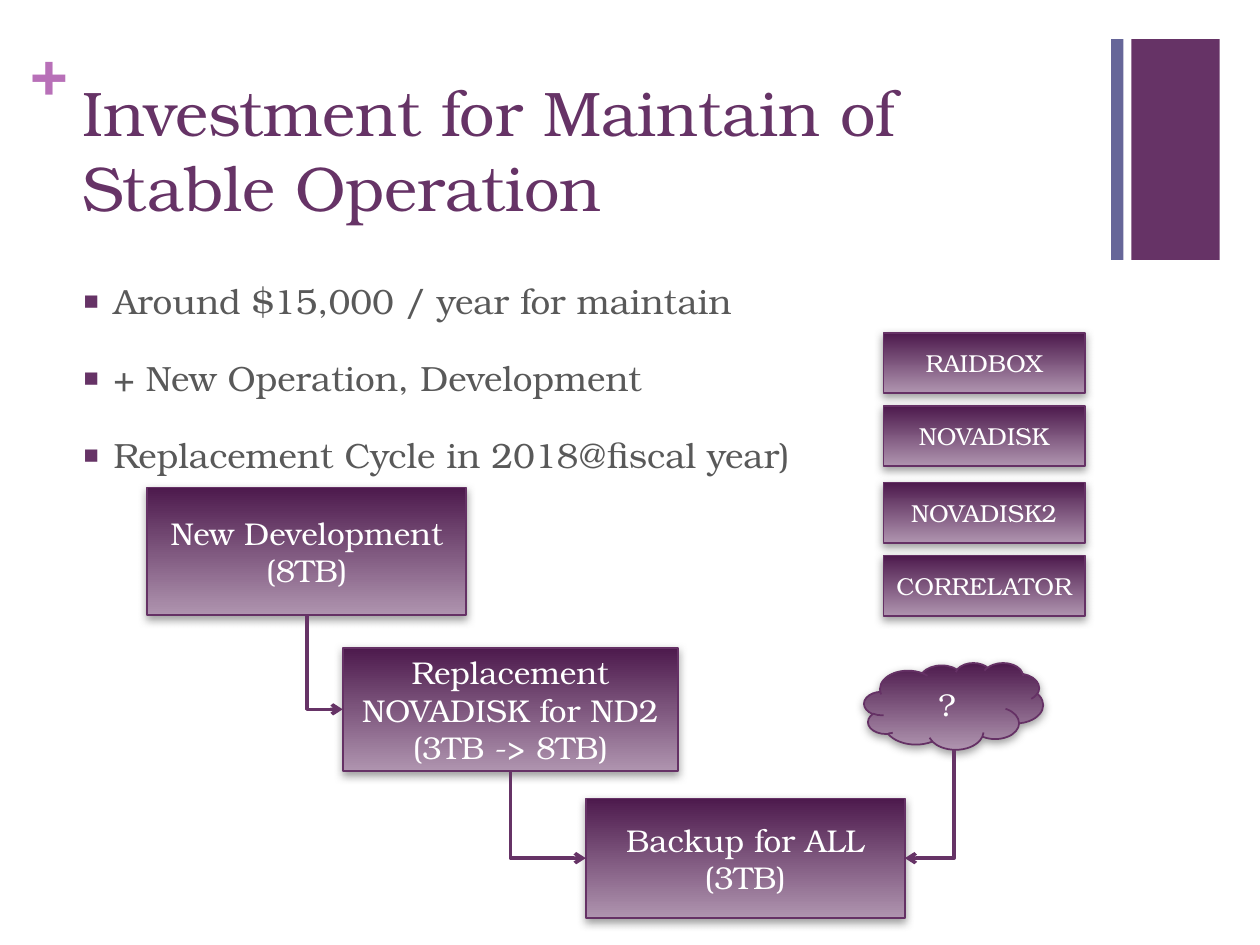
"""Build the slide on investment for stable operation."""
from lxml.etree import SubElement
from pptx import Presentation
from pptx.dml.color import RGBColor
from pptx.enum.shapes import MSO_CONNECTOR, MSO_SHAPE
from pptx.enum.text import MSO_ANCHOR, MSO_AUTO_SIZE, PP_ALIGN
from pptx.oxml.ns import qn
from pptx.util import Cm, Pt

FONT = "TeX Gyre Bonum"
PURPLE, WHITE = "663366", "FFFFFF"


def color(value):
    """Turn a hex string into a colour."""
    return RGBColor.from_string(value)


def write(shape, text, size, ink, align=PP_ALIGN.LEFT, bold=False):
    """Fill a shape with text and format every run."""
    frame = shape.text_frame
    frame.text = text
    frame.word_wrap = True
    frame.auto_size = MSO_AUTO_SIZE.NONE
    for paragraph in frame.paragraphs:
        paragraph.alignment = align
        for run in paragraph.runs:
            run.font.name = FONT
            run.font.size = Pt(size)
            run.font.bold = bold
            run.font.color.rgb = color(ink)
    return frame


deck = Presentation()
deck.slide_width, deck.slide_height = Cm(25.4), Cm(19.05)
page = deck.slides.add_slide(deck.slide_layouts[5])

for left, width, fill in [(22.81, 1.78, PURPLE), (22.4, 0.25, "666699")]:
    bar = page.shapes.add_shape(MSO_SHAPE.RECTANGLE, Cm(left), Cm(0.79), Cm(width), Cm(4.45))
    bar.shadow.inherit = False
    bar.fill.solid()
    bar.fill.fore_color.rgb = color(fill)
    bar.line.fill.background()

plus = page.shapes.add_textbox(Cm(0.61), Cm(0.64), Cm(0.74), Cm(1.55))
plus_frame = write(plus, "+", 36, "B870B8", bold=True)
plus_frame.word_wrap = False
plus_frame.margin_left = plus_frame.margin_right = 0
plus_frame.margin_top = plus_frame.margin_bottom = 0

title = page.shapes.title
title.left, title.top, title.width, title.height = Cm(1.4), Cm(1.35), Cm(20.98), Cm(3.1)
title_frame = write(title, "Investment for Maintain of Stable Operation", 36, PURPLE)
title_frame.vertical_anchor = MSO_ANCHOR.TOP

points = [
    "Around $15,000 / year for maintain",
    "+ New Operation, Development",
    "Replacement Cycle in 2018@fiscal year)",
]
body = page.shapes.add_textbox(Cm(1.4), Cm(5.51), Cm(20.98), Cm(11.51))
for paragraph in write(body, "\n".join(points), 20, "595959").paragraphs:
    paragraph.space_before = Pt(20)
    properties = paragraph._p.get_or_add_pPr()
    properties.set("marL", str(Cm(0.64)))
    properties.set("indent", str(-Cm(0.64)))
    bullet_color = SubElement(properties, qn("a:buClr"))
    SubElement(bullet_color, qn("a:srgbClr"), val=PURPLE)
    SubElement(properties, qn("a:buSzPct"), val="75000")
    SubElement(properties, qn("a:buFont"), typeface=FONT)
    SubElement(properties, qn("a:buChar"), char="■")

boxes = [
    (MSO_SHAPE.RECTANGLE, 2.97, 9.83, 6.43, 2.57, "New Development\n(8TB)", 18),
    (MSO_SHAPE.RECTANGLE, 6.91, 13.06, 6.76, 2.49, "Replacement NOVADISK for ND2\n(3TB -> 8TB)", 18),
    (MSO_SHAPE.RECTANGLE, 11.81, 16.1, 6.43, 2.41, "Backup for ALL\n(3TB)", 18),
    (MSO_SHAPE.CLOUD, 17.42, 13.36, 3.61, 1.75, "?", 18),
]
devices = [("RAIDBOX", 6.71), ("NOVADISK", 8.18), ("NOVADISK2", 9.73), ("CORRELATOR", 11.2)]
for name, top in devices:
    boxes.append((MSO_SHAPE.RECTANGLE, 17.81, top, 4.06, 1.22, name, 14))

for kind, left, top, width, height, text, size in boxes:
    box = page.shapes.add_shape(kind, Cm(left), Cm(top), Cm(width), Cm(height))
    box.fill.gradient()
    box.fill.gradient_angle = 270
    for stop, position, shade in zip(box.fill.gradient_stops, (0, 1), ("4D1A4D", "AF94AF")):
        stop.position = position
        stop.color.rgb = color(shade)
    box.line.color.rgb = color("653165")
    box.line.width = Pt(1)
    box.shadow.inherit = False
    effects = box._element.spPr.find(qn("a:effectLst"))
    shadow = SubElement(effects, qn("a:outerShdw"), blurRad=str(Pt(5)), dist=str(Pt(2)),
                        dir="5400000", rotWithShape="0")
    shadow_color = SubElement(shadow, qn("a:srgbClr"), val="808080")
    SubElement(shadow_color, qn("a:alpha"), val="75000")
    frame = write(box, text, size, WHITE, PP_ALIGN.CENTER)
    frame.vertical_anchor = MSO_ANCHOR.MIDDLE
    frame.margin_left = frame.margin_right = Cm(0.2)

arrows = [
    (6.19, 12.4, 6.91, 14.3),
    (10.29, 15.56, 11.81, 17.3),
    (19.23, 15.12, 18.24, 17.3),
]
for start_x, start_y, end_x, end_y in arrows:
    middle_x, middle_y = (start_x + end_x) / 2, (start_y + end_y) / 2
    half_width, half_height = (end_y - start_y) / 2, abs(end_x - start_x) / 2
    arrow = page.shapes.add_connector(
        MSO_CONNECTOR.ELBOW,
        Cm(middle_x - half_width), Cm(middle_y - half_height),
        Cm(middle_x + half_width), Cm(middle_y + half_height))
    arrow.line.color.rgb = color(PURPLE)
    arrow.line.width = Pt(2)
    shape_properties = arrow._element.spPr
    shape_properties.find(qn("a:prstGeom")).set("prst", "bentConnector2")
    transform = shape_properties.find(qn("a:xfrm"))
    if end_x > start_x:
        transform.set("rot", "16200000")
        transform.set("flipH", "1")
    else:
        transform.set("rot", "5400000")
    SubElement(shape_properties.find(qn("a:ln")), qn("a:tailEnd"), type="arrow")
    SubElement(shape_properties, qn("a:effectLst"))

deck.save("out.pptx")
